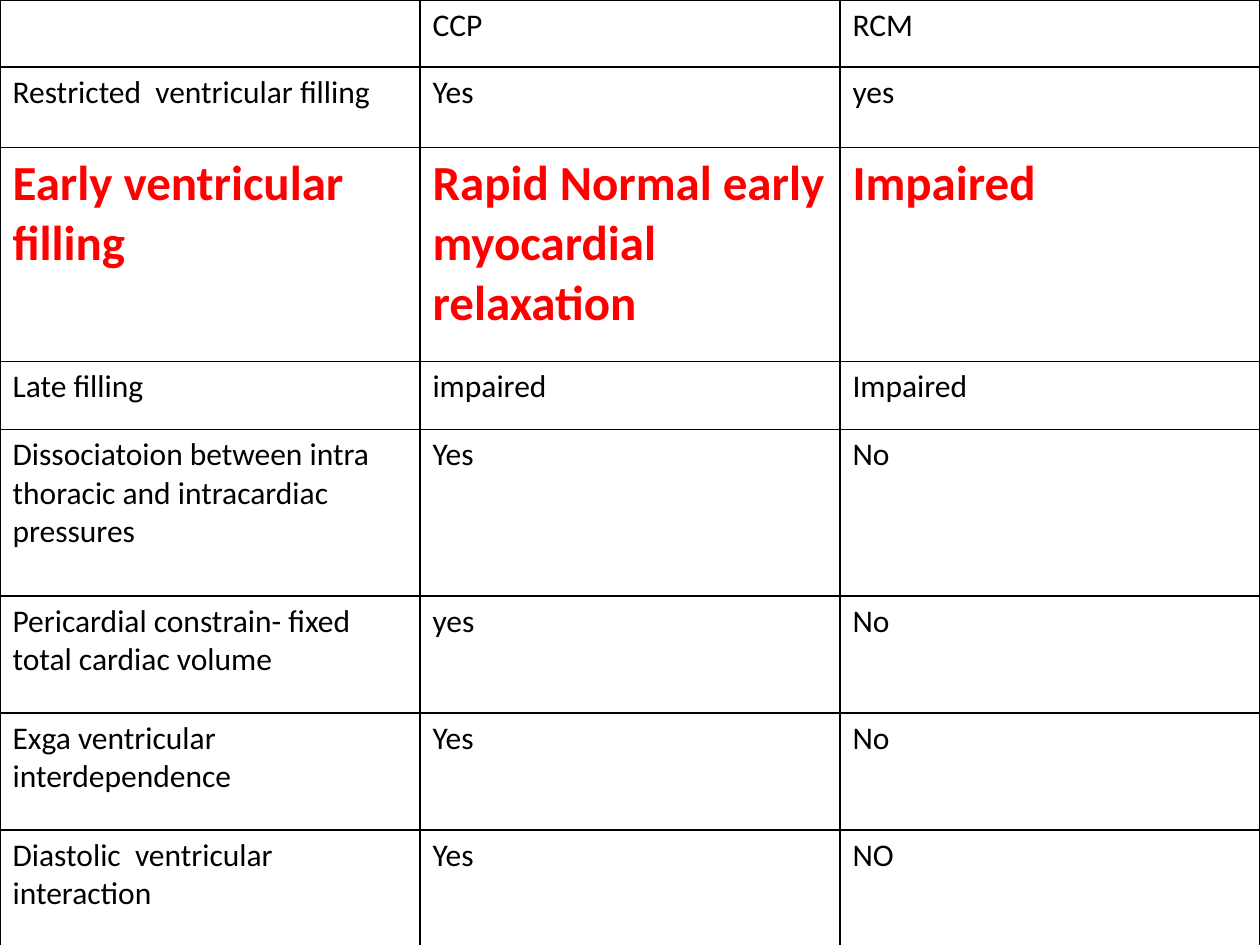
"""Build a slide with a table comparing CCP and RCM."""
from dataclasses import dataclass

from lxml.etree import SubElement
from pptx import Presentation
from pptx.dml.color import RGBColor
from pptx.oxml.ns import qn
from pptx.util import Inches, Pt


@dataclass(frozen=True)
class Theme:
    font: str = "Calibri"
    text: str = "000000"
    accent: str = "FF0000"
    border: str = "000000"
    body_size: int = 18
    accent_size: int = 28
    border_width: int = 1


@dataclass(frozen=True)
class Row:
    height: float
    feature: str
    ccp: str
    rcm: str
    emphasis: bool = False


THEME = Theme()
WIDTH, HEIGHT = 10, 7.5
COLUMNS = 3
ROWS = [
    Row(0.53, "", "CCP", "RCM"),
    Row(0.64, "Restricted  ventricular filling", "Yes", "yes"),
    Row(1.7, "Early ventricular filling",
        "Rapid Normal early myocardial relaxation", "Impaired", True),
    Row(0.54, "Late filling", "impaired", "Impaired"),
    Row(1.32, "Dissociatoion between intra thoracic and intracardiac pressures",
        "Yes", "No"),
    Row(0.93, "Pericardial constrain- fixed total cardiac volume", "yes", "No"),
    Row(0.93, "Exga ventricular interdependence", "Yes", "No"),
    Row(0.93, "Diastolic  ventricular interaction", "Yes", "NO"),
]


def set_borders(cell) -> None:
    tc_pr = cell._tc.get_or_add_tcPr()
    for side in ("a:lnL", "a:lnR", "a:lnT", "a:lnB"):
        ln = SubElement(tc_pr, qn(side), w=str(Pt(THEME.border_width)))
        fill = SubElement(ln, qn("a:solidFill"))
        SubElement(fill, qn("a:srgbClr"), val=THEME.border)


def fill_cell(cell, text: str, emphasis: bool) -> None:
    set_borders(cell)
    cell.fill.background()
    cell.text = text
    font = cell.text_frame.paragraphs[0].font
    font.name = THEME.font
    font.size = Pt(THEME.accent_size if emphasis else THEME.body_size)
    font.bold = emphasis
    font.color.rgb = RGBColor.from_string(THEME.accent if emphasis else THEME.text)


def add_comparison(s, rows: list[Row]) -> None:
    table = s.shapes.add_table(
        len(rows), COLUMNS, 0, 0, Inches(WIDTH), Inches(HEIGHT)).table
    table.first_row = table.horz_banding = False
    for column in table.columns:
        column.width = Inches(WIDTH / COLUMNS)
    for i, row in enumerate(rows):
        table.rows[i].height = Inches(row.height)
        for j, text in enumerate((row.feature, row.ccp, row.rcm)):
            fill_cell(table.cell(i, j), text, row.emphasis)


def main() -> None:
    prs = Presentation()
    prs.slide_width, prs.slide_height = Inches(WIDTH), Inches(HEIGHT)
    s = prs.slides.add_slide(prs.slide_layouts[6])
    add_comparison(s, ROWS)
    prs.save("out.pptx")


if __name__ == "__main__":
    main()
